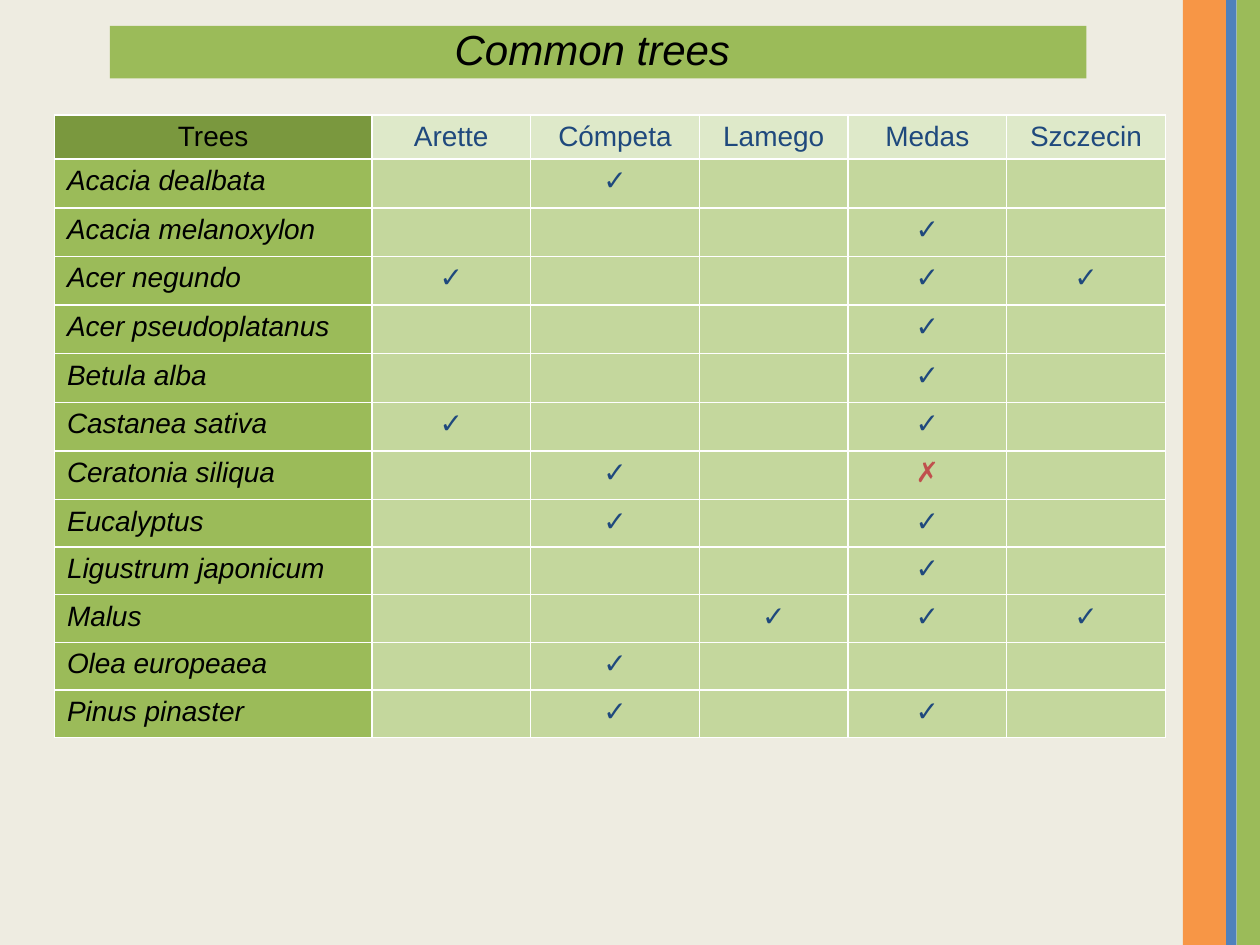
"""Build the slide that shows which common trees grow in each place."""
from dataclasses import dataclass
from typing import Any

import lxml.etree
import pptx
import pptx.dml.color
import pptx.enum.shapes
import pptx.enum.text
import pptx.oxml.ns
import pptx.util

Pt = pptx.util.Pt
ALIGN = pptx.enum.text.PP_ALIGN
ANCHOR = pptx.enum.text.MSO_ANCHOR

COLORS = {
    "page": "EEECE1",
    "orange": "F79646",
    "blue": "4F81BD",
    "green": "9BBB59",
    "corner": "7A983E",
    "header": "DEE9C9",
    "body": "C4D79D",
    "border": "FFFFFF",
    "black": "000000",
    "navy": "1F497D",
    "red": "C0504D",
}


@dataclass
class Bar:
    left: float
    width: float
    color: str


@dataclass
class Tree:
    name: str
    marks: dict[str, str]


@dataclass
class CellStyle:
    fill: str
    ink: str
    align: Any
    italic: bool = False


BARS = [
    Bar(676, 24.6, "orange"),
    Bar(706.6, 13.4, "green"),
    Bar(700.6, 6, "blue"),
]

PLACES = ["Arette", "Cómpeta", "Lamego", "Medas", "Szczecin"]
YES, NO = "✓", "✗"
TREES = [
    Tree("Acacia dealbata", {"Cómpeta": YES}),
    Tree("Acacia melanoxylon", {"Medas": YES}),
    Tree("Acer negundo", {"Arette": YES, "Medas": YES, "Szczecin": YES}),
    Tree("Acer pseudoplatanus", {"Medas": YES}),
    Tree("Betula alba", {"Medas": YES}),
    Tree("Castanea sativa", {"Arette": YES, "Medas": YES}),
    Tree("Ceratonia siliqua", {"Cómpeta": YES, "Medas": NO}),
    Tree("Eucalyptus", {"Cómpeta": YES, "Medas": YES}),
    Tree("Ligustrum japonicum", {"Medas": YES}),
    Tree("Malus", {"Lamego": YES, "Medas": YES, "Szczecin": YES}),
    Tree("Olea europeaea", {"Cómpeta": YES}),
    Tree("Pinus pinaster", {"Cómpeta": YES, "Medas": YES}),
]

COLUMN_WIDTHS = [181.4, 90.7, 96.5, 84.9, 90.7, 90.7]
ROW_HEIGHTS = [25.2] + [27.8] * 7 + [27.2] * 5

CORNER = CellStyle("corner", "black", ALIGN.CENTER)
HEADER = CellStyle("header", "navy", ALIGN.CENTER)
NAME = CellStyle("green", "black", ALIGN.LEFT, italic=True)
TICK = CellStyle("body", "navy", ALIGN.CENTER)
CROSS = CellStyle("body", "red", ALIGN.CENTER)


def apply_format(target: Any, values: dict[str, Any]) -> None:
    """Set each named attribute on the target."""
    for name, value in values.items():
        setattr(target, name, value)


def paint(fill: Any, color: str) -> None:
    """Give a fill one solid colour."""
    fill.solid()
    fill.fore_color.rgb = pptx.dml.color.RGBColor.from_string(COLORS[color])


def write(para: Any, text: str, size: float, color: str, italic: bool) -> None:
    """Add one formatted run to a paragraph."""
    span = para.add_run()
    span.text = text
    apply_format(span.font, {"name": "Arial", "size": Pt(size),
                             "bold": False, "italic": italic})
    span.font.color.rgb = pptx.dml.color.RGBColor.from_string(COLORS[color])


def draw_bar(page: Any, bar: Bar, height: int) -> None:
    """Draw a full-height stripe at the right edge."""
    box = page.shapes.add_shape(pptx.enum.shapes.MSO_SHAPE.RECTANGLE,
                                Pt(bar.left), 0, Pt(bar.width), height)
    box.shadow.inherit = False
    box.line.fill.background()
    paint(box.fill, bar.color)


def draw_borders(cell: Any) -> None:
    """Line all four sides of a cell."""
    qn = pptx.oxml.ns.qn
    properties = cell._tc.get_or_add_tcPr()
    for side in ("a:lnL", "a:lnR", "a:lnT", "a:lnB"):
        line = lxml.etree.SubElement(properties, qn(side), w=str(Pt(1)))
        solid = lxml.etree.SubElement(line, qn("a:solidFill"))
        lxml.etree.SubElement(solid, qn("a:srgbClr"), val=COLORS["border"])


def fill_cell(cell: Any, text: str, style: CellStyle) -> None:
    """Format one table cell and write its text."""
    draw_borders(cell)
    paint(cell.fill, style.fill)
    apply_format(cell, {"margin_top": Pt(3.6), "margin_bottom": 0,
                        "vertical_anchor": ANCHOR.TOP})
    para = cell.text_frame.paragraphs[0]
    para.alignment = style.align
    if text:
        write(para, text, 16, style.ink, style.italic)


def draw_table(page: Any) -> None:
    """Draw the table of trees by place."""
    frame = page.shapes.add_table(
        len(ROW_HEIGHTS), len(COLUMN_WIDTHS), Pt(31.1), Pt(65.8),
        Pt(sum(COLUMN_WIDTHS)), Pt(sum(ROW_HEIGHTS)))
    table = frame.table
    apply_format(table, {"first_row": False, "horz_banding": False})
    for column, width in zip(table.columns, COLUMN_WIDTHS):
        column.width = Pt(width)
    for row, height in zip(table.rows, ROW_HEIGHTS):
        row.height = Pt(height)

    fill_cell(table.cell(0, 0), "Trees", CORNER)
    for column, place in enumerate(PLACES, start=1):
        fill_cell(table.cell(0, column), place, HEADER)
    for row, tree in enumerate(TREES, start=1):
        fill_cell(table.cell(row, 0), tree.name, NAME)
        for column, place in enumerate(PLACES, start=1):
            mark = tree.marks.get(place, "")
            fill_cell(table.cell(row, column), mark, CROSS if mark == NO else TICK)


def draw_title(page: Any) -> None:
    """Place the title on its green band."""
    title = page.shapes.title
    apply_format(title, {"left": Pt(62.8), "top": Pt(14.8),
                         "width": Pt(558), "height": Pt(30)})
    paint(title.fill, "green")
    apply_format(title.text_frame, {
        "auto_size": pptx.enum.text.MSO_AUTO_SIZE.NONE,
        "vertical_anchor": ANCHOR.MIDDLE, "word_wrap": True})
    para = title.text_frame.paragraphs[0]
    apply_format(para, {"alignment": ALIGN.CENTER, "line_spacing": 0.9,
                        "space_before": Pt(4.8)})
    write(para, "Common trees ", 24, "black", italic=True)


def main() -> None:
    """Build and save the deck."""
    deck = pptx.Presentation()
    apply_format(deck, {"slide_width": Pt(720), "slide_height": Pt(540)})
    page = deck.slides.add_slide(deck.slide_layouts.get_by_name("Title Only"))
    paint(page.background.fill, "page")
    for bar in BARS:
        draw_bar(page, bar, deck.slide_height)
    draw_table(page)
    draw_title(page)
    deck.save("out.pptx")


if __name__ == "__main__":
    main()
